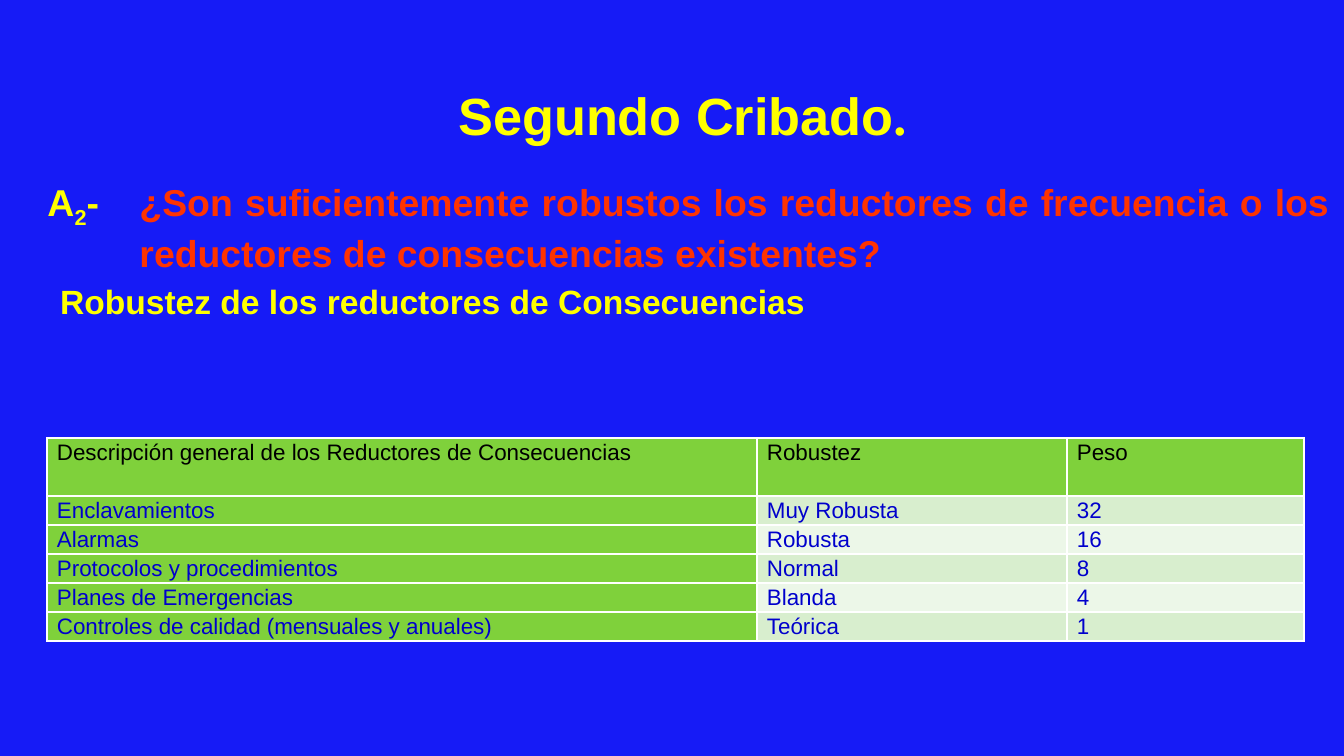
from lxml import etree
from pptx import Presentation
from pptx.dml.color import RGBColor
from pptx.enum.text import MSO_ANCHOR, MSO_AUTO_SIZE, PP_ALIGN
from pptx.oxml.ns import qn
from pptx.util import Pt

MIDDLE, TOP = MSO_ANCHOR.MIDDLE, MSO_ANCHOR.TOP
FIXED, GROW = MSO_AUTO_SIZE.NONE, MSO_AUTO_SIZE.SHAPE_TO_FIT_TEXT
LEFT, CENTER, JUSTIFY = PP_ALIGN.LEFT, PP_ALIGN.CENTER, PP_ALIGN.JUSTIFY

BLUE = RGBColor(0x16, 0x1B, 0xF6)
YELLOW = RGBColor(0xFF, 0xFF, 0x00)
RED = RGBColor(0xFF, 0x33, 0x00)
BLACK = RGBColor(0x00, 0x00, 0x00)
NAVY = RGBColor(0x00, 0x00, 0xCC)
GREEN = RGBColor(0x7F, 0xD1, 0x3B)
BANDS = (RGBColor(0xD8, 0xEE, 0xCE), RGBColor(0xEC, 0xF7, 0xE8))
WHITE = "FFFFFF"

# Each run: text, colour, font, baseline shift in thousandths of a percent
TITLE = [("Segundo Cribado", YELLOW, "Arial", 0),
         (".", YELLOW, "Times New Roman", 0)]
QUERY = [("A", YELLOW, "Arial", 0),
         ("2", YELLOW, "Arial", -25000),
         ("-\t", YELLOW, "Arial", 0),
         ("¿Son suficientemente robustos los reductores de frecuencia o los "
          "reductores de consecuencias existentes? ", RED, "Arial", 0)]
TOPIC = [("Robustez de los reductores de Consecuencias", YELLOW, "Arial", 0)]
ROWS = [
    ("Descripción general de los Reductores de Consecuencias", "Robustez", "Peso"),
    ("Enclavamientos", "Muy Robusta", "32"),
    ("Alarmas", "Robusta", "16"),
    ("Protocolos y procedimientos", "Normal", "8"),
    ("Planes de Emergencias", "Blanda", "4"),
    ("Controles de calidad (mensuales y anuales)", "Teórica", "1"),
]

TITLE_BOX = (185, 63, 995, 103)
QUERY_BOX = (34, 172, 1310, 103)
TOPIC_BOX = (47, 274, 1164, 54)
TABLE_AT = (47, 438)
COLS = (710, 310, 237)
HEAD, LINE = 58, 29
HANG = 92


def px(n):
    return round(n * 914400 / 134.4)


def put(obj, vals):
    for key, val in vals.items():
        setattr(obj, key, val)


def place(shape, box):
    put(shape, dict(zip(("left", "top", "width", "height"), map(px, box))))


def write(frame, runs, size, align, anchor, fit):
    """Fill a text frame with one bold paragraph and return it."""
    put(frame, {"word_wrap": True, "auto_size": fit, "vertical_anchor": anchor})
    para = frame.paragraphs[0]
    put(para, {"alignment": align, "space_before": Pt(0)})
    for text, color, face, base in runs:
        run = para.add_run()
        run.text = text
        put(run.font, {"size": Pt(size), "name": face, "bold": True})
        run.font.color.rgb = color
        if base:
            run.font._element.set("baseline", str(base))
    return para


def edge(cell):
    """Draw a thin white line on all four sides of a cell."""
    props = cell._tc.get_or_add_tcPr()
    for i, side in enumerate("LRTB"):
        line = etree.Element(qn("a:ln" + side), w=str(Pt(1)))
        fill = etree.SubElement(line, qn("a:solidFill"))
        etree.SubElement(fill, qn("a:srgbClr"), val=WHITE)
        props.insert(i, line)


def fill_cell(cell, text, ink, fill):
    put(cell, {"margin_left": px(10), "margin_right": px(10),
               "margin_top": 0, "margin_bottom": 0, "vertical_anchor": TOP})
    cell.fill.solid()
    cell.fill.fore_color.rgb = fill
    edge(cell)
    para = cell.text_frame.paragraphs[0]
    para.line_spacing = 1.07
    run = para.add_run()
    run.text = text
    put(run.font, {"size": Pt(12), "name": "Arial", "bold": False})
    run.font.color.rgb = ink


def add_grid(slide):
    size = (sum(COLS), HEAD + LINE * (len(ROWS) - 1))
    table = slide.shapes.add_table(len(ROWS), len(COLS),
                                   *map(px, TABLE_AT + size)).table
    put(table, {"first_row": False, "horz_banding": False})
    for col, wide in zip(table.columns, COLS):
        col.width = px(wide)
    for r, row in enumerate(ROWS):
        table.rows[r].height = px(LINE if r else HEAD)
        for c, text in enumerate(row):
            fill = BANDS[(r - 1) % 2] if r and c else GREEN
            fill_cell(table.cell(r, c), text, NAVY if r else BLACK, fill)


def main():
    prs = Presentation()
    put(prs, {"slide_width": px(1344), "slide_height": px(756)})
    slide = prs.slides.add_slide(prs.slide_layouts[1])
    back = slide.background.fill
    back.solid()
    back.fore_color.rgb = BLUE

    query = slide.placeholders[1]
    place(query, QUERY_BOX)
    para = write(query.text_frame, QUERY, 20, JUSTIFY, TOP, GROW)
    props = para._p.get_or_add_pPr()
    props.set("marL", str(px(HANG)))
    props.set("indent", str(-px(HANG)))
    etree.SubElement(props, qn("a:buNone"))

    title = slide.shapes.title
    place(title, TITLE_BOX)
    write(title.text_frame, TITLE, 28, CENTER, MIDDLE, FIXED)

    topic = slide.shapes.add_textbox(*map(px, TOPIC_BOX))
    write(topic.text_frame, TOPIC, 18, LEFT, TOP, GROW)

    add_grid(slide)
    prs.save("out.pptx")


if __name__ == "__main__":
    main()
